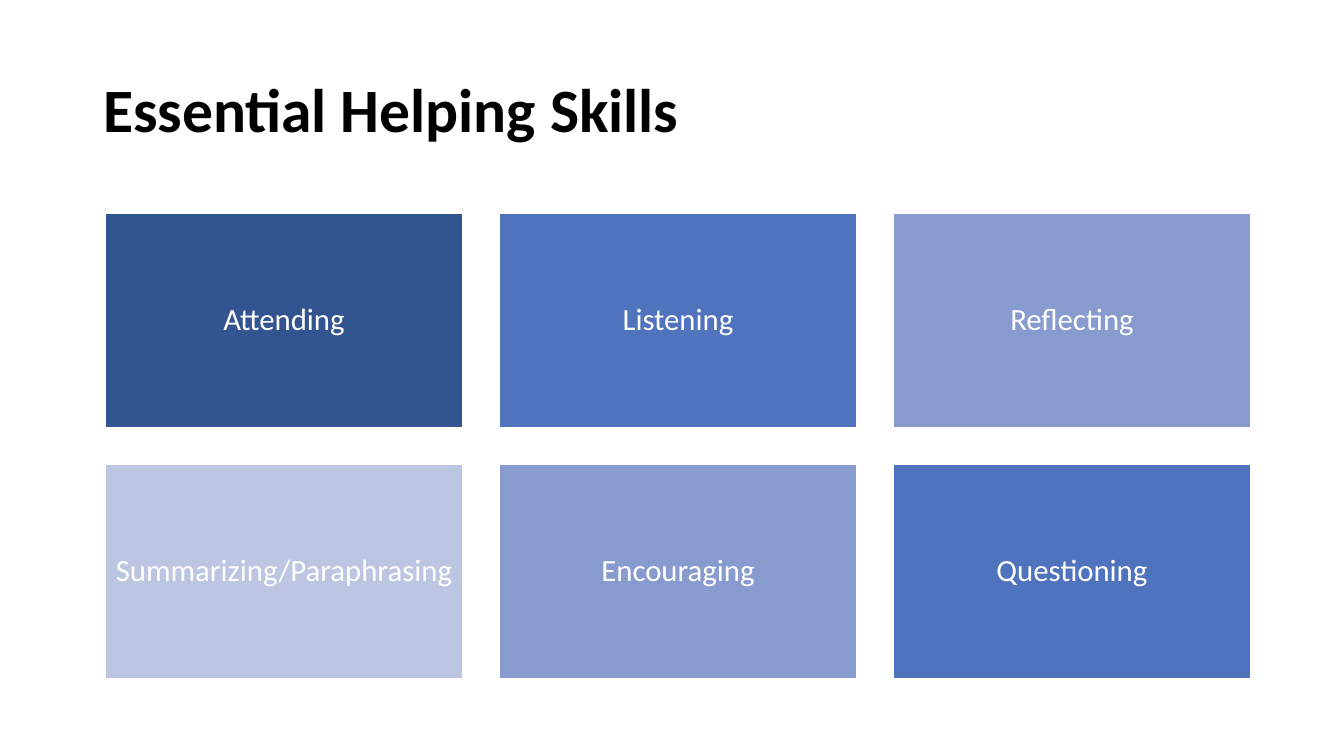
from pptx import Presentation
from pptx.dml.color import RGBColor
from pptx.enum.shapes import MSO_SHAPE
from pptx.enum.text import MSO_ANCHOR, PP_ALIGN
from pptx.util import Pt

RECTANGLE = MSO_SHAPE.RECTANGLE
MIDDLE = MSO_ANCHOR.MIDDLE
LEFT, CENTER = PP_ALIGN.LEFT, PP_ALIGN.CENTER

PX = 914400 / 100.8
COLORS = {
    "black": "000000",
    "white": "FFFFFF",
    "navy": "325491",
    "blue": "4F73BD",
    "soft": "879BCE",
    "pale": "BCC6E2",
}


def px(*lengths):
    return [round(length * PX) for length in lengths]


def write(shape, text, color, align, **font_format):
    frame = shape.text_frame
    frame.text = text
    frame.word_wrap = True
    frame.vertical_anchor = MIDDLE
    para = frame.paragraphs[0]
    para.alignment = align
    para.line_spacing = 0.9
    span = para.runs[0]
    span.font.name = "Calibri"
    span.font.color.rgb = RGBColor.from_string(COLORS[color])
    for name, value in font_format.items():
        setattr(span.font, name, value)
    return para


deck = Presentation()
deck.slide_width, deck.slide_height = px(1344, 756)
page = deck.slides.add_slide(deck.slide_layouts[5])

# Title
title = page.shapes.title
title.left, title.top, title.width, title.height = px(93, 40, 1159, 146)
write(title, "Essential Helping Skills", "black", LEFT, size=Pt(44), bold=True)

# Skill tiles, three to a row
skills = [
    ("Attending", "navy"),
    ("Listening", "blue"),
    ("Reflecting", "soft"),
    ("Summarizing/Paraphrasing", "pale"),
    ("Encouraging", "soft"),
    ("Questioning", "blue"),
]
COLUMNS = 3
GRID_LEFT, GRID_TOP = 105, 213
TILE_WIDTH, TILE_HEIGHT = 358, 215
STEP_X, STEP_Y = 394, 251

for index, (skill, fill) in enumerate(skills):
    row, column = divmod(index, COLUMNS)
    tile = page.shapes.add_shape(RECTANGLE, *px(
        GRID_LEFT + column * STEP_X, GRID_TOP + row * STEP_Y,
        TILE_WIDTH, TILE_HEIGHT))
    tile.shadow.inherit = False
    tile.fill.solid()
    tile.fill.fore_color.rgb = RGBColor.from_string(COLORS[fill])
    tile.line.color.rgb = RGBColor.from_string(COLORS["white"])
    tile.line.width = Pt(1)
    for side in ("left", "top", "right", "bottom"):
        setattr(tile.text_frame, f"margin_{side}", px(9)[0])
    para = write(tile, skill, "white", CENTER, size=Pt(22))
    para.space_after = Pt(7.7)

deck.save("out.pptx")
